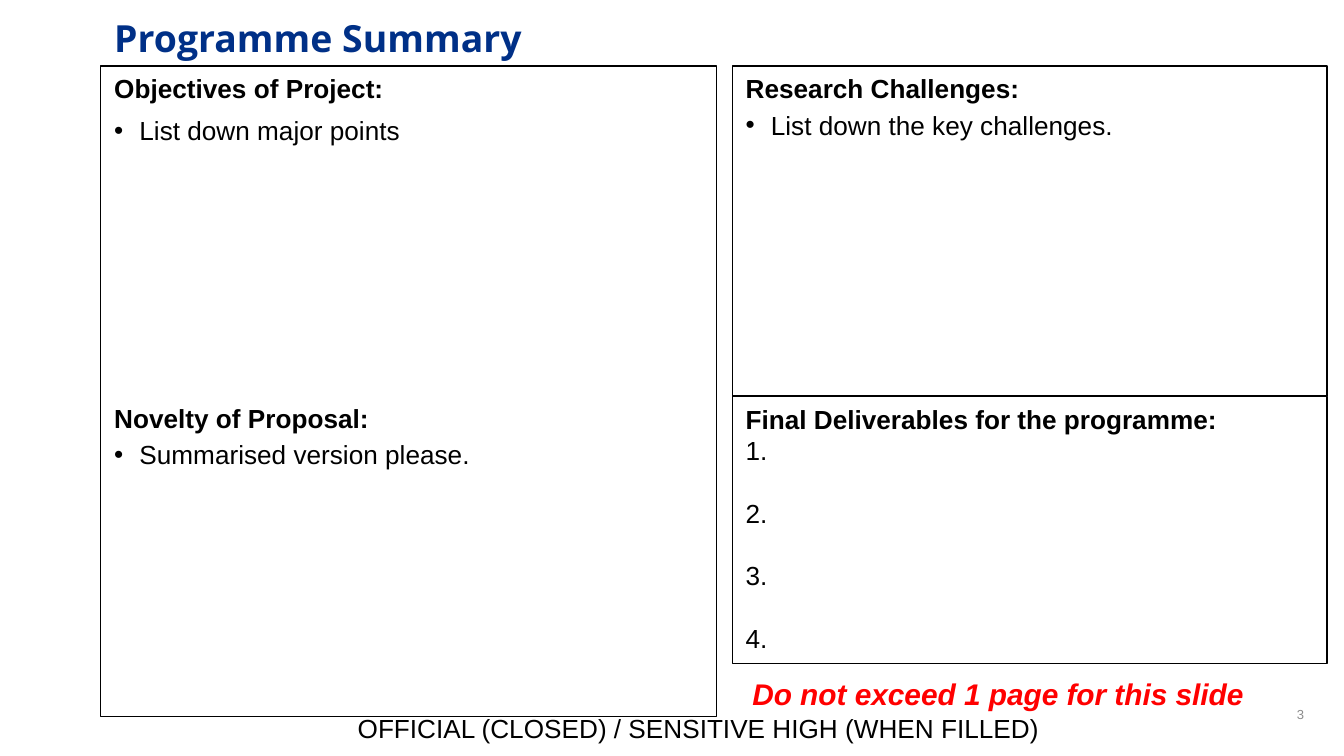
from dataclasses import dataclass

import pptx
import pptx.dml.color
import pptx.enum.shapes
import pptx.enum.text
import pptx.oxml
import pptx.oxml.ns
import pptx.util

PX = 9525  # EMU per px, 96 px to the inch
COLORS = {"text": "000000", "title": "003087", "warning": "FF0000", "number": "8C8C8C"}
ALIGN = pptx.enum.text.PP_ALIGN
ANCHOR = pptx.enum.text.MSO_ANCHOR
HANG = 18
SMALL_GAP, WIDE_GAP = 2.8, 5.6
NOVELTY_GAP = 137.2
ITEM_GAP = 16.8


@dataclass
class Box:
    x: int
    y: int
    w: int
    h: int

    def emu(self) -> list[int]:
        return [v * PX for v in (self.x, self.y, self.w, self.h)]


@dataclass
class Line:
    text: str
    before: float = 0
    bold: bool = False
    italic: bool = False
    bullet: bool = False
    size: int = 14
    font: str = "Arial"
    color: str = "text"
    align: ALIGN = ALIGN.LEFT


def set_bullet(p, shown: bool) -> None:
    pPr = p._p.get_or_add_pPr()
    pPr.set("marL", str(HANG * PX if shown else 0))
    pPr.set("indent", str(-HANG * PX if shown else 0))
    tag = '<a:buChar %s char="•"/>' if shown else "<a:buNone %s/>"
    pPr.append(pptx.oxml.parse_xml(tag % pptx.oxml.ns.nsdecls("a")))


def write(s, lines: list[Line], anchor=ANCHOR.TOP, wrap: bool = True) -> None:
    tf = s.text_frame
    tf.word_wrap = wrap
    tf.auto_size = pptx.enum.text.MSO_AUTO_SIZE.NONE
    tf.vertical_anchor = anchor
    for i, line in enumerate(lines):
        p = tf.add_paragraph() if i else tf.paragraphs[0]
        set_bullet(p, line.bullet)
        p.alignment = line.align
        p.space_before = pptx.util.Pt(line.before)
        r = p.add_run()
        r.text = line.text
        r.font.name = line.font
        r.font.size = pptx.util.Pt(line.size)
        r.font.bold = line.bold
        r.font.italic = line.italic
        r.font.color.rgb = pptx.dml.color.RGBColor.from_string(COLORS[line.color])


def place(s, box: Box) -> None:
    s.left, s.top, s.width, s.height = box.emu()


def add_label(slide, box: Box, line: Line, anchor=ANCHOR.TOP, wrap: bool = True) -> None:
    write(slide.shapes.add_textbox(*box.emu()), [line], anchor, wrap)


def fill_panel(s, box: Box, lines: list[Line]) -> None:
    """Turn a body placeholder into an outlined panel of text."""
    place(s, box)
    s.fill.background()
    s.line.color.rgb = pptx.dml.color.RGBColor.from_string(COLORS["text"])
    s.line.width = pptx.util.Pt(0.75)
    write(s, lines)


PANELS = [
    (Box(72, 47, 440, 465), [
        Line("Objectives of Project:", bold=True),
        Line("List down major points", WIDE_GAP, bullet=True),
        Line("Novelty of Proposal:", NOVELTY_GAP, bold=True),
        Line("Summarised version please.", SMALL_GAP, bullet=True),
    ]),
    (Box(523, 47, 425, 236), [
        Line("Research Challenges:", bold=True),
        Line("List down the key challenges.", SMALL_GAP, bullet=True),
    ]),
    (Box(523, 283, 425, 191), [
        Line("Final Deliverables for the programme:", bold=True),
        *[Line(f"{n}.", ITEM_GAP if n > 1 else 0) for n in range(1, 5)],
    ]),
]


def main() -> None:
    prs = pptx.Presentation()
    prs.slide_width, prs.slide_height = 960 * PX, 540 * PX
    slide = prs.slides.add_slide(prs.slide_layouts.get_by_name("Comparison"))

    title = slide.shapes.title
    place(title, Box(72, 6, 831, 76))
    write(title, [Line("Programme Summary", bold=True, size=20,
                       font="Open Sans", color="title")])

    bodies = [s for s in slide.placeholders if s.placeholder_format.idx > 0]
    for s, (box, lines) in zip(bodies, PANELS):
        fill_panel(s, box, lines)
    for s in bodies[len(PANELS):]:
        s.element.getparent().remove(s.element)

    add_label(slide, Box(528, 478, 375, 36),
              Line("Do not exceed 1 page for this slide", bold=True, italic=True,
                   size=16, color="warning"), wrap=False)
    add_label(slide, Box(246, 504, 521, 33),
              Line("OFFICIAL (CLOSED) / SENSITIVE HIGH (WHEN FILLED)"))
    add_label(slide, Box(717, 496, 224, 29),
              Line("3", size=7, color="number", align=ALIGN.RIGHT), ANCHOR.MIDDLE)

    prs.save("out.pptx")


if __name__ == "__main__":
    main()
